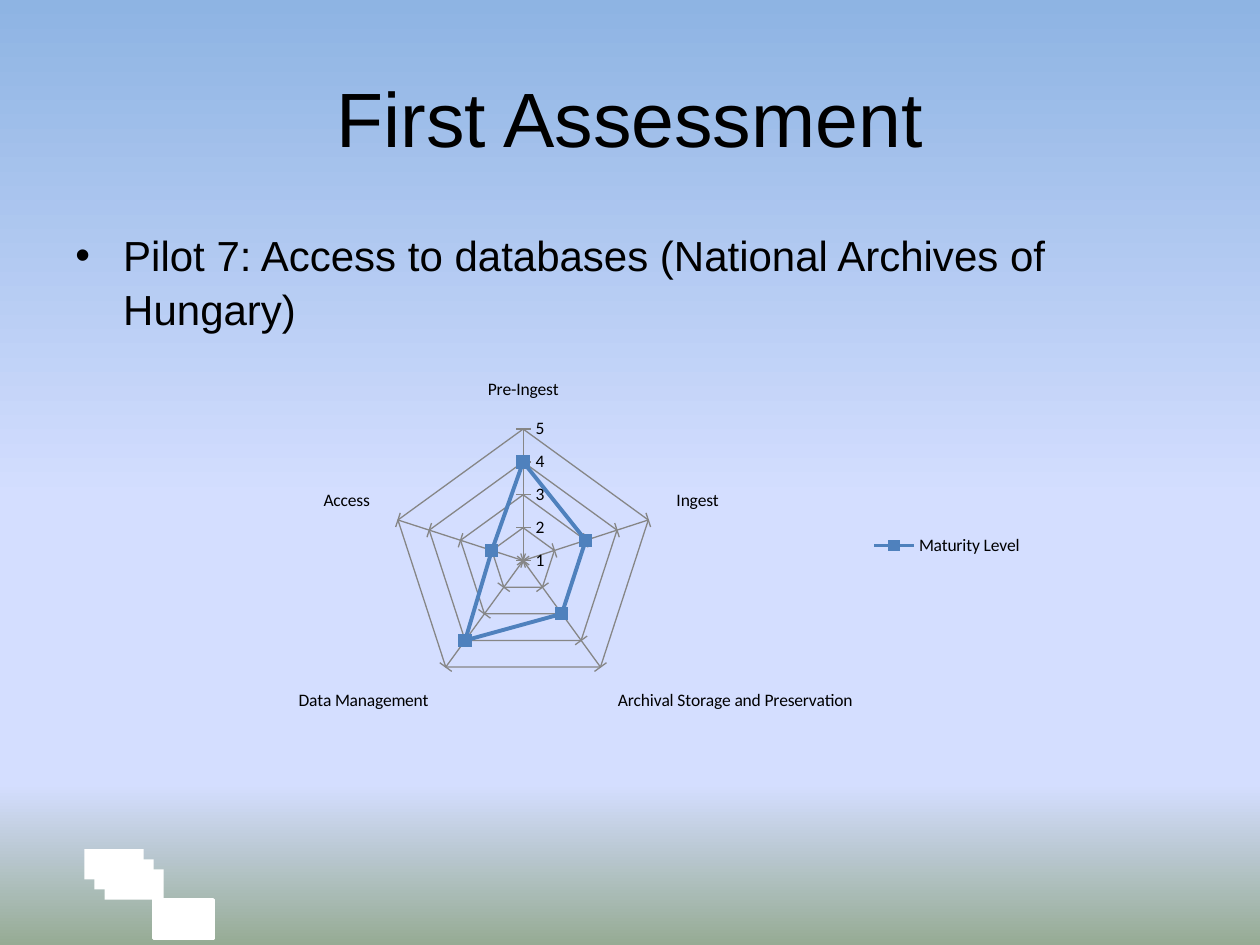
import pptx
import pptx.chart.data
import pptx.dml.color
import pptx.enum.chart
import pptx.enum.shapes
import pptx.enum.text
import pptx.oxml
import pptx.oxml.ns
import pptx.util
from pptx.util import Inches

COLORS = {
    "text": "000000",
    "block": "FFFFFF",
    "series": "4F81BD",
    "grid": "868686",
    "sky": "8EB4E3",
    "haze": "D4DEFF",
    "ground": "96AB94",
}


def rgb(name):
    return pptx.dml.color.RGBColor.from_string(COLORS[name])


class SlideBuilder:
    """Holds the style and the current slide."""

    font = "Arial"
    chart_font = "Calibri"

    def __init__(self, deck):
        self.page = deck.slides.add_slide(deck.slide_layouts[5])

    def background(self, stops):
        fill = self.page.background.fill
        fill.gradient()
        fill.gradient_angle = 270
        stop_list = self.page.element.find(".//" + pptx.oxml.ns.qn("a:gsLst"))
        for stop in list(stop_list):
            stop_list.remove(stop)
        for percent, color in stops:
            stop_list.append(pptx.oxml.parse_xml(
                f'<a:gs {pptx.oxml.ns.nsdecls("a")} pos="{percent * 1000}">'
                f'<a:srgbClr val="{COLORS[color]}"/></a:gs>'))

    def block(self, left, top, width, height, line_width=None):
        shape = self.page.shapes.add_shape(
            pptx.enum.shapes.MSO_SHAPE.RECTANGLE,
            Inches(left), Inches(top), Inches(width), Inches(height))
        shape.shadow.inherit = False
        shape.fill.solid()
        shape.fill.fore_color.rgb = rgb("block")
        if line_width:
            shape.line.color.rgb = rgb("block")
            shape.line.width = pptx.util.Pt(line_width)
        else:
            shape.line.fill.background()

    def add_span(self, para, text, size):
        span = para.add_run()
        span.text = text
        span.font.name = self.font
        span.font.size = pptx.util.Pt(size)
        span.font.color.rgb = rgb("text")

    def title(self, text, left, top, width, height):
        box = self.page.shapes.title
        box.left, box.top = Inches(left), Inches(top)
        box.width, box.height = Inches(width), Inches(height)
        box.text_frame.vertical_anchor = pptx.enum.text.MSO_ANCHOR.MIDDLE
        para = box.text_frame.paragraphs[0]
        para.alignment = pptx.enum.text.PP_ALIGN.CENTER
        self.add_span(para, text, 44)

    def bullet(self, text, left, top, width, height):
        box = self.page.shapes.add_textbox(
            Inches(left), Inches(top), Inches(width), Inches(height))
        box.text_frame.word_wrap = True
        para = box.text_frame.paragraphs[0]
        properties = para._p.get_or_add_pPr()
        properties.set("marL", str(Inches(0.38)))
        properties.set("indent", str(Inches(-0.38)))
        for tag in ('buFont typeface="Arial"', 'buChar char="•"'):
            properties.append(pptx.oxml.parse_xml(
                f'<a:{tag} {pptx.oxml.ns.nsdecls("a")}/>'))
        para.line_spacing = 1.06
        self.add_span(para, text, 24)

    def radar(self, name, scores, left, top, width, height):
        data = pptx.chart.data.CategoryChartData(number_format="General")
        data.categories = list(scores)
        data.add_series(name, list(scores.values()))
        chart = self.page.shapes.add_chart(
            pptx.enum.chart.XL_CHART_TYPE.RADAR_MARKERS,
            Inches(left), Inches(top), Inches(width), Inches(height), data).chart
        chart.has_title = False
        chart.font.name = self.chart_font
        chart.font.size = pptx.util.Pt(10)
        chart.font.color.rgb = rgb("text")
        chart.has_legend = True
        chart.legend.position = pptx.enum.chart.XL_LEGEND_POSITION.RIGHT
        chart.legend.include_in_layout = False

        # Axes and web
        tick = pptx.enum.chart.XL_TICK_MARK
        for axis, mark in ((chart.category_axis, tick.OUTSIDE),
                           (chart.value_axis, tick.CROSS)):
            axis.has_major_gridlines = True
            axis.major_tick_mark = mark
            axis.minor_tick_mark = tick.NONE
            for line in (axis.major_gridlines.format.line, axis.format.line):
                line.color.rgb = rgb("grid")
                line.width = pptx.util.Pt(0.75)
        chart.value_axis.minimum_scale = 1
        chart.value_axis.maximum_scale = 5
        chart.value_axis.major_unit = 1

        # Series line and markers
        chart.plots[0].vary_by_categories = False
        series = chart.plots[0].series[0]
        series.smooth = False
        series.format.line.color.rgb = rgb("series")
        series.format.line.width = pptx.util.Pt(2.25)
        series.marker.style = pptx.enum.chart.XL_MARKER_STYLE.SQUARE
        series.marker.size = 7
        series.marker.format.fill.solid()
        series.marker.format.fill.fore_color.rgb = rgb("series")
        series.marker.format.line.color.rgb = rgb("series")


def main():
    deck = pptx.Presentation()
    deck.slide_width, deck.slide_height = Inches(10), Inches(7.5)
    slide = SlideBuilder(deck)
    slide.background([(0, "sky"), (53, "haze"), (83, "haze"), (100, "ground")])

    # Corner blocks: one outlined, then three stepping up to the left
    slide.block(1.22, 7.14, 0.47, 0.31, line_width=2)
    for step in range(3):
        slide.block(0.83 - 0.08 * step, 6.9 - 0.08 * step, 0.47, 0.24)

    # Title and text
    slide.title("First Assessment", 0.5, 0.3, 9, 1.25)
    slide.bullet("Pilot 7: Access to databases (National Archives of Hungary)",
                 0.5, 1.75, 9, 4.95)

    # Maturity chart
    slide.radar("Maturity Level", {
        "Pre-Ingest": 4,
        "Ingest": 3,
        "Archival Storage and Preservation": 3,
        "Data Management": 4,
        "Access": 2,
    }, 2.24, 2.49, 5.98, 3.68)

    deck.save("out.pptx")


if __name__ == "__main__":
    main()
